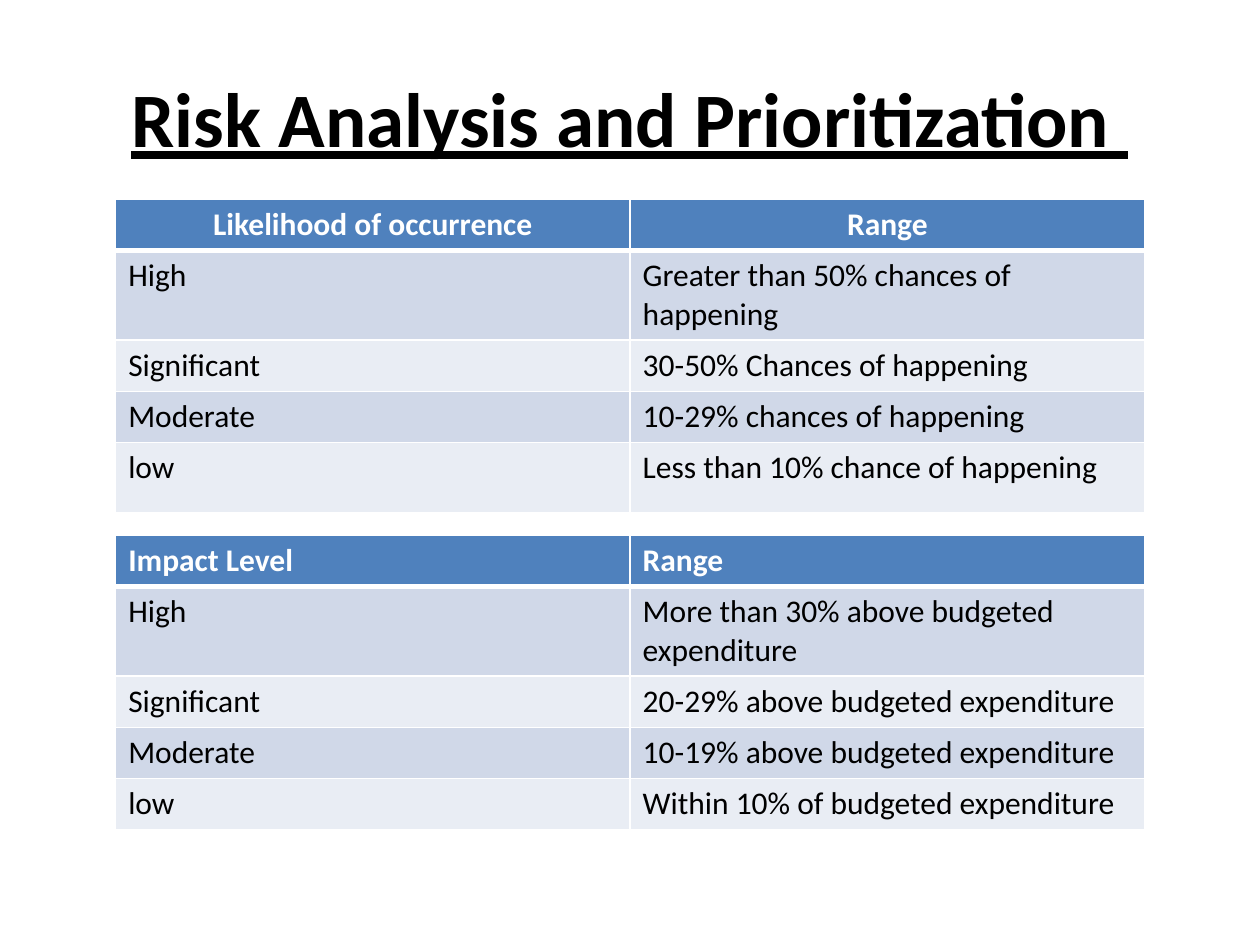
import dataclasses

import lxml.etree
import pptx
import pptx.dml.color
import pptx.enum.text
import pptx.oxml.ns
import pptx.slide
import pptx.text.text
import pptx.util

Pt = pptx.util.Pt
ALIGN = pptx.enum.text.PP_ALIGN

COLORS = {
    "text": "000000",
    "white": "FFFFFF",
    "header": "4F81BD",
    "band_dark": "D0D8E8",
    "band_light": "E9EDF4",
}
TITLE_FORMAT = {"name": "Calibri", "size": Pt(44), "bold": True, "underline": True}
HEADER_FORMAT = {"name": "Calibri", "size": Pt(18), "bold": True}
BODY_FORMAT = {"name": "Calibri", "size": Pt(18), "bold": False}

TABLE_LEFT = 66.1
COLUMN_WIDTH = 294
ONE_LINE, TWO_LINES = 29.2, 51.2


@dataclasses.dataclass
class RiskTable:
    top: float
    header_align: ALIGN
    row_heights: list[float]
    rows: list[tuple[str, str]]


TABLES = [
    RiskTable(
        114, ALIGN.CENTER,
        [ONE_LINE, TWO_LINES, ONE_LINE, ONE_LINE, 40],
        [
            ("Likelihood of occurrence", "Range"),
            ("High", "Greater than 50% chances of happening"),
            ("Significant", "30-50% Chances of happening"),
            ("Moderate", "10-29% chances of happening"),
            ("low", "Less than 10% chance of happening"),
        ],
    ),
    RiskTable(
        306, ALIGN.LEFT,
        [ONE_LINE, TWO_LINES, ONE_LINE, ONE_LINE, ONE_LINE],
        [
            ("Impact Level", "Range"),
            ("High", "More than 30% above budgeted expenditure"),
            ("Significant", "20-29% above budgeted expenditure"),
            ("Moderate", "10-19% above budgeted expenditure"),
            ("low", "Within 10% of budgeted expenditure"),
        ],
    ),
]


def rgb(color: str) -> pptx.dml.color.RGBColor:
    return pptx.dml.color.RGBColor.from_string(COLORS[color])


def write_text(frame: pptx.text.text.TextFrame, text: str, values: dict,
               color: str, align: ALIGN) -> None:
    paragraph = frame.paragraphs[0]
    paragraph.alignment = align
    run = paragraph.add_run()
    run.text = text
    for name, value in values.items():
        setattr(run.font, name, value)
    run.font.color.rgb = rgb(color)


def add_borders(cell, widths: dict[str, float]) -> None:
    """Draw white cell borders; they must precede the fill in the XML."""
    qn = pptx.oxml.ns.qn
    properties = cell._tc.get_or_add_tcPr()
    for position, (side, width) in enumerate(widths.items()):
        line = lxml.etree.Element(qn(f"a:{side}"), w=str(Pt(width)))
        fill = lxml.etree.SubElement(line, qn("a:solidFill"))
        lxml.etree.SubElement(fill, qn("a:srgbClr"), val=COLORS["white"])
        properties.insert(position, line)


def add_risk_table(slide: pptx.slide.Slide, spec: RiskTable) -> None:
    table = slide.shapes.add_table(
        len(spec.rows), 2, Pt(TABLE_LEFT), Pt(spec.top),
        Pt(2 * COLUMN_WIDTH), Pt(sum(spec.row_heights)),
    ).table
    for column in table.columns:
        column.width = Pt(COLUMN_WIDTH)
    for row_index, texts in enumerate(spec.rows):
        table.rows[row_index].height = Pt(spec.row_heights[row_index])
        is_header = row_index == 0
        band = "band_dark" if row_index % 2 else "band_light"
        for column_index, text in enumerate(texts):
            cell = table.cell(row_index, column_index)
            cell.fill.solid()
            cell.fill.fore_color.rgb = rgb("header" if is_header else band)
            add_borders(cell, {
                "lnL": 1, "lnR": 1,
                "lnT": 3 if row_index == 1 else 1,
                "lnB": 3 if is_header else 1,
            })
            write_text(
                cell.text_frame, text,
                HEADER_FORMAT if is_header else BODY_FORMAT,
                "white" if is_header else "text",
                spec.header_align if is_header else ALIGN.LEFT,
            )


def add_title(slide: pptx.slide.Slide, text: str) -> None:
    frame = slide.shapes.add_textbox(Pt(36), Pt(21.6), Pt(648), Pt(90)).text_frame
    frame.word_wrap = True
    frame.vertical_anchor = pptx.enum.text.MSO_ANCHOR.MIDDLE
    write_text(frame, text, TITLE_FORMAT, "text", ALIGN.CENTER)


def main() -> None:
    presentation = pptx.Presentation()
    presentation.slide_width, presentation.slide_height = Pt(720), Pt(540)
    slide = presentation.slides.add_slide(presentation.slide_layouts[6])

    # Title
    add_title(slide, "Risk Analysis and Prioritization ")

    # Likelihood and impact scales
    for spec in TABLES:
        add_risk_table(slide, spec)

    presentation.save("out.pptx")


if __name__ == "__main__":
    main()
